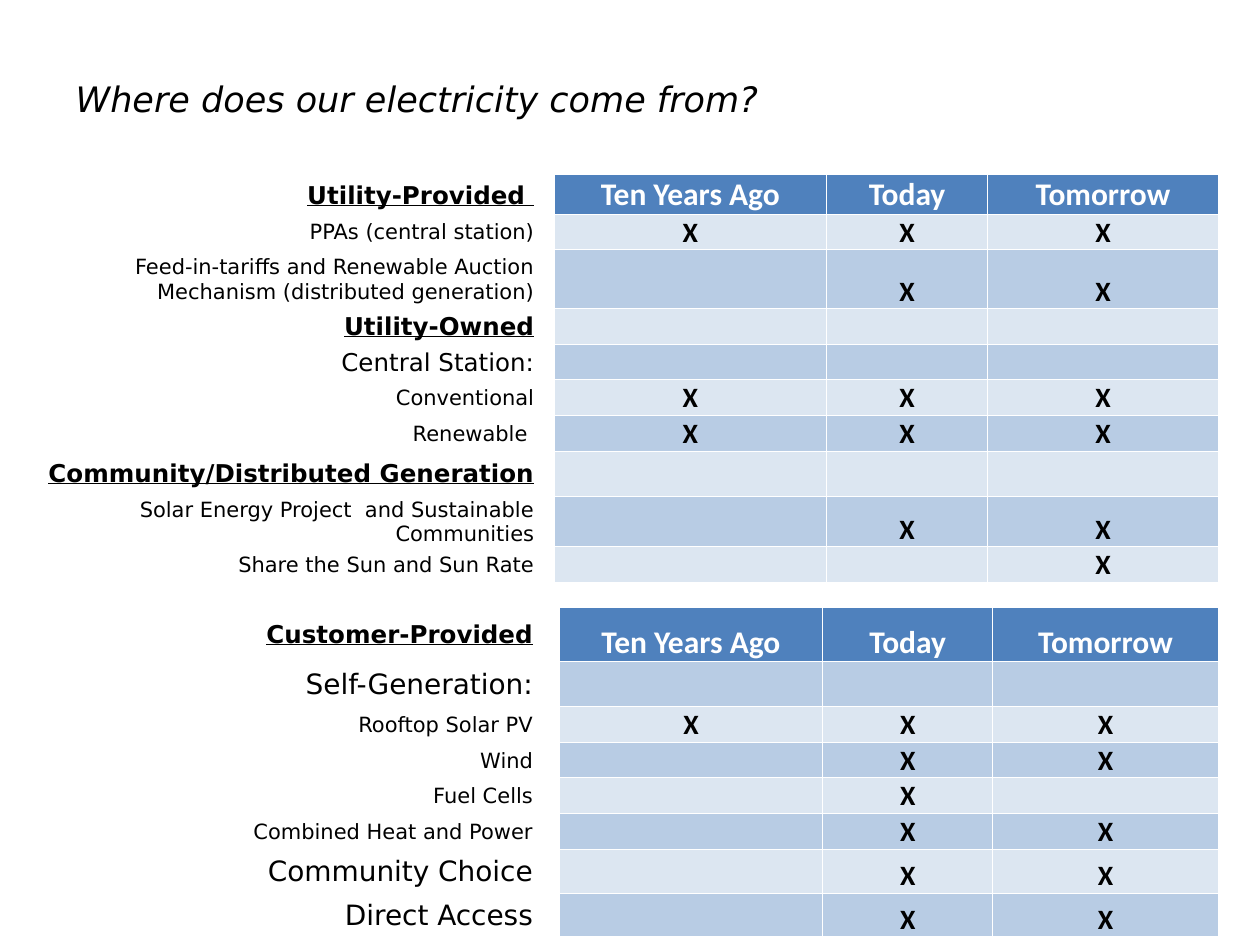
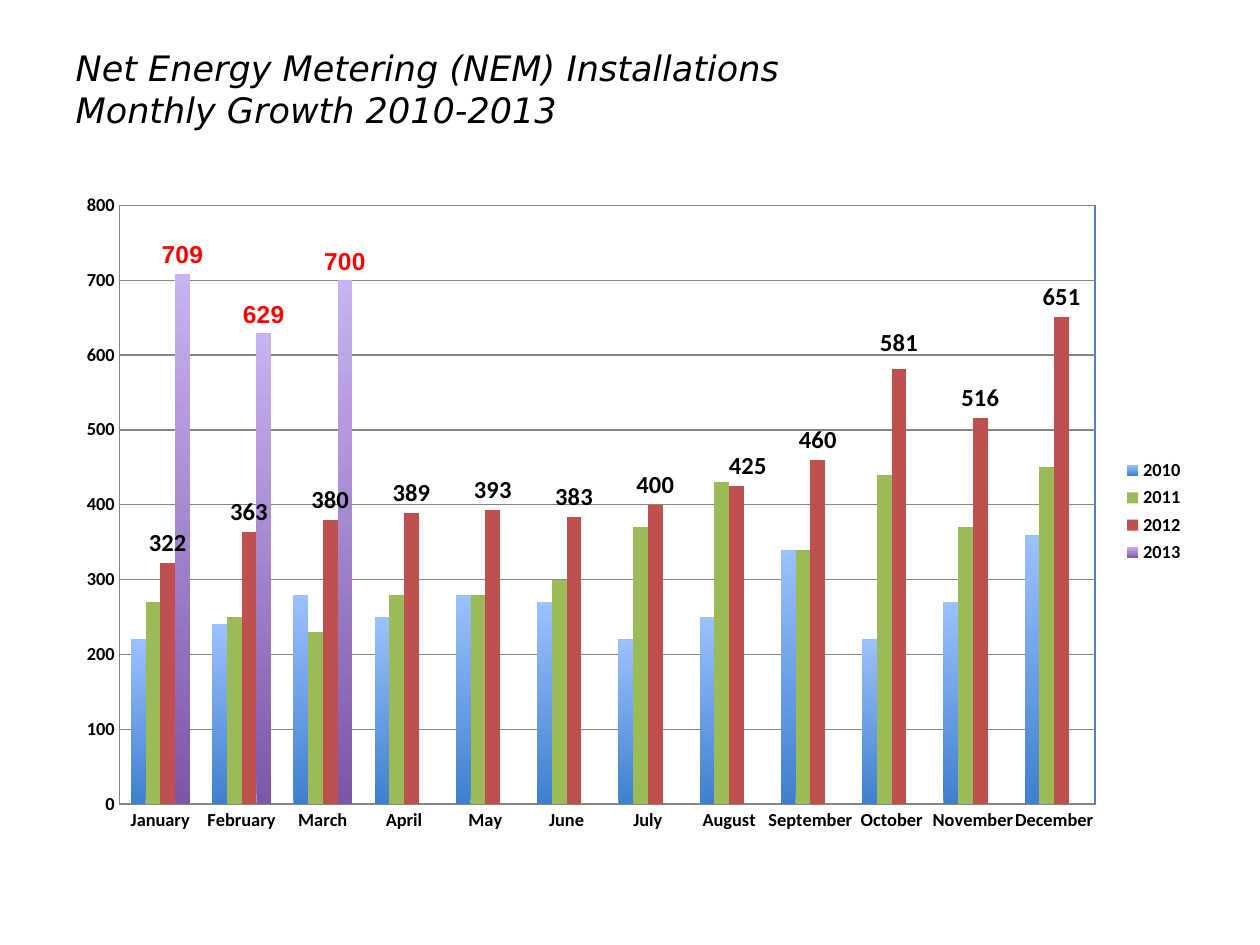
from lxml.etree import SubElement as Sub
from pptx import Presentation
from pptx.chart.data import CategoryChartData as ChartData
from pptx.dml.color import RGBColor as RGB
from pptx.enum.chart import XL_CHART_TYPE as Kind, XL_LABEL_POSITION as Spot
from pptx.enum.chart import XL_LEGEND_POSITION as Side, XL_TICK_MARK as Tick
from pptx.enum.text import MSO_ANCHOR as Anchor, MSO_AUTO_SIZE as Fit, PP_ALIGN as Align
from pptx.oxml.ns import qn
from pptx.util import Inches, Pt

# Shared colours and fonts
BLACK = RGB(0, 0, 0)
WHITE = RGB(255, 255, 255)
RED = RGB(255, 0, 0)
BLUE = RGB(0x4F, 0x81, 0xBD)
PALE = RGB(0xDC, 0xE6, 0xF1)
MID = RGB(0xB8, 0xCC, 0xE4)
GREEN = RGB(0x9B, 0xBB, 0x59)
BRICK = RGB(0xC0, 0x50, 0x4D)
GREY = RGB(0x86, 0x86, 0x86)
SKY = [RGB(0x3F, 0x80, 0xCD), RGB(0x9B, 0xC1, 0xFF)]
PLUM = [RGB(0x7B, 0x57, 0xA8), RGB(0xC9, 0xB2, 0xF0)]
SANS = "DejaVu Sans"
BODY = "Calibri"

# Label styles: head, group and item
HEAD = dict(size=14, bold=True, line=True)
SUB = dict(size=14)
BIG = dict(size=16)
ITEM = dict(size=12)

TIMES = ["Ten Years Ago", "Today", "Tomorrow"]
UTILITY = [
    # label, style, marks, row height
    ("Utility-Provided", HEAD, TIMES, 0.32),
    ("PPAs (central station)", ITEM, "XXX", 0.28),
    ("Feed-in-tariffs and Renewable Auction Mechanism (distributed generation)",
     ITEM, " XX", 0.47),
    ("Utility-Owned", HEAD, "   ", 0.28),
    ("Central Station:", SUB, "   ", 0.28),
    ("Conventional", ITEM, "XXX", 0.28),
    ("Renewable ", ITEM, "XXX", 0.28),
    ("Community/Distributed Generation", HEAD, "   ", 0.36),
    ("Solar Energy Project  and Sustainable Communities", ITEM, " XX", 0.4),
    ("Share the Sun and Sun Rate", ITEM, "  X", 0.28),
]
CUSTOMER = [
    ("Customer-Provided", HEAD, TIMES, 0.43),
    ("Self-Generation:", BIG, "   ", 0.36),
    ("Rooftop Solar PV", ITEM, "XXX", 0.28),
    ("Wind", ITEM, " XX", 0.28),
    ("Fuel Cells", ITEM, " X ", 0.28),
    ("Combined Heat and Power", ITEM, " XX", 0.28),
    ("Community Choice", BIG, " XX", 0.35),
    ("Direct Access", BIG, " XX", 0.35),
]

MONTHS = ["January", "February", "March", "April", "May", "June", "July",
          "August", "September", "October", "November", "December"]
GROWTH = {
    "2010": (220, 240, 280, 250, 280, 270, 220, 250, 340, 220, 270, 360),
    "2011": (270, 250, 230, 280, 280, 300, 370, 430, 340, 440, 370, 450),
    "2012": (322, 363, 380, 389, 393, 383, 400, 425, 460, 581, 516, 651),
    "2013": (709, 629, 700) + (None,) * 9,
}


def style(font, size, face=BODY, color=BLACK, bold=False, italic=False, line=False):
    font.size, font.name, font.color.rgb = Pt(size), face, color
    font.bold, font.italic, font.underline = bold, italic, line


def write(para, text, align=Align.LEFT, **fmt):
    para.alignment = align
    run = para.add_run()
    run.text = text
    style(run.font, **fmt)


def add_slide(deck, title, top, foot=0.05):
    """Title-only slide; foot is the inset below the title."""
    slide = deck.slides.add_slide(deck.slide_layouts[5])
    box = slide.shapes.title
    box.left, box.top = Inches(0.5), Inches(top)
    box.width, box.height = Inches(6.5), Inches(0.62)
    frame = box.text_frame
    frame.word_wrap, frame.auto_size = True, Fit.NONE
    frame.vertical_anchor = Anchor.MIDDLE
    frame.margin_bottom = Inches(foot)
    write(frame.paragraphs[0], title, size=20, face=SANS, italic=True)
    return slide


def rule(cell, sides):
    """Thin white borders on the given sides, in the order L R T B."""
    for side in sides:
        edge = Sub(cell._tc.get_or_add_tcPr(), qn("a:ln" + side), w="6350")
        fill = Sub(edge, qn("a:solidFill"))
        Sub(fill, qn("a:srgbClr"), val=str(WHITE))


def pad(cell, right, anchor):
    cell.margin_left = cell.margin_top = Inches(0.01)
    cell.margin_right, cell.margin_bottom = Inches(right), 0
    cell.vertical_anchor = anchor


def fill_mark(cell, text, row, col, last, shade):
    """One cell of the coloured grid, with borders on its inner sides."""
    pad(cell, 0.01, Anchor.BOTTOM)
    inner = {"L": col > 0, "R": col < 2, "T": row > 0, "B": row < last}
    rule(cell, [side for side, on in inner.items() if on])
    cell.fill.solid()
    cell.fill.fore_color.rgb = shade
    para = cell.text_frame.paragraphs[0]
    if text.strip():
        look = dict(size=16) if row else dict(size=18, color=WHITE)
        write(para, text, align=Align.CENTER, bold=True, **look)
    else:
        Sub(para._p, qn("a:endParaRPr"), sz="1600")


def add_grid(slide, left, top, widths, rows, bands):
    """Right-aligned labels, a narrow gap and three columns of marks."""
    size = [Inches(n) for n in (left, top, sum(widths), sum(r[3] for r in rows))]
    table = slide.shapes.add_table(len(rows), len(widths), *size).table
    table.first_row = table.horz_banding = False
    for col, width in zip(table.columns, widths):
        col.width = Inches(width)
    for i, (label, look, marks, high) in enumerate(rows):
        table.rows[i].height = Inches(high)
        name, gap = table.cell(i, 0), table.cell(i, 1)
        for cell, right in ((name, 0.09), (gap, 0.01)):
            pad(cell, right, Anchor.MIDDLE)
            cell.fill.background()
        write(name.text_frame.paragraphs[0], label, align=Align.RIGHT, face=SANS, **look)
        Sub(gap.text_frame.paragraphs[0]._p, qn("a:endParaRPr"), sz="1200")
        shade = bands[i % 2] if i else BLUE
        for j, mark in enumerate(marks):
            fill_mark(table.cell(i, j + 2), mark, i, j, len(rows) - 1, shade)
    return table


def set_layout(node, after, **place):
    """Manual layout for a chart part, placed after its given child."""
    for old in node.findall(qn("c:layout")):
        node.remove(old)
    layout = Sub(node, qn("c:layout"))
    manual = Sub(layout, qn("c:manualLayout"))
    for key, val in place.items():
        Sub(manual, qn("c:" + key), val=str(val))
    if after is None:
        node.insert(0, layout)
    else:
        after.addnext(layout)


def paint(series, color):
    """Solid fill, or a gradient from the foot up for a list of two colours."""
    fill = series.format.fill
    if isinstance(color, list):
        fill.gradient()
        fill.gradient_angle = 90
        for stop, shade in zip(fill.gradient_stops, color):
            stop.color.rgb = shade
    else:
        fill.solid()
        fill.fore_color.rgb = color


def label(series, **fmt):
    labels = series.data_labels
    labels.show_value, labels.position = True, Spot.OUTSIDE_END
    style(labels.font, size=14, bold=True, **fmt)


def shift(series, index, x, y):
    """Move the label of one column by a share of the chart's size."""
    tag = series.points[index].data_label
    style(tag.font, size=14, bold=True)
    tag.position = Spot.OUTSIDE_END
    for node in series.data_labels._element.findall(qn("c:dLbl")):
        idx = node.find(qn("c:idx"))
        if idx.get("val") == str(index):
            set_layout(node, idx, x=x, y=y)


def frame_plot(chart):
    area = chart._chartSpace.chart.plotArea
    set_layout(area, None, layoutTarget="inner", xMode="edge", yMode="edge",
               x=0.05, y=0.04, w=0.86, h=0.9)
    edge = Sub(Sub(area, qn("c:spPr")), qn("a:ln"), w="9525")
    Sub(Sub(edge, qn("a:solidFill")), qn("a:srgbClr"), val=str(BLUE))


def add_growth(slide, left, top, width, height):
    data = ChartData()
    data.categories = MONTHS
    for year, vals in GROWTH.items():
        data.add_series(year, vals)
    box = [Inches(n) for n in (left, top, width, height)]
    chart = slide.shapes.add_chart(Kind.COLUMN_CLUSTERED, *box, data).chart
    chart.has_title = False
    style(chart.font, size=10)

    # Axes, gridlines and legend
    values, months = chart.value_axis, chart.category_axis
    values.minimum_scale, values.maximum_scale, values.major_unit = 0, 800, 100
    values.has_major_gridlines = True
    for axis in (values, months):
        axis.major_tick_mark = axis.minor_tick_mark = Tick.NONE
        style(axis.tick_labels.font, size=10.5, bold=True)
        axis.format.line.color.rgb = GREY
    values.major_gridlines.format.line.color.rgb = GREY
    chart.has_legend = True
    chart.legend.position = Side.RIGHT
    chart.legend.include_in_layout = False
    style(chart.legend.font, size=10.5, bold=True)

    # Columns and their labels
    plot = chart.plots[0]
    plot.gap_width, plot.overlap, plot.vary_by_categories = 150, 0, False
    for series, color in zip(plot.series, (SKY, GREEN, BRICK, PLUM)):
        paint(series, color)
    label(plot.series[2])
    label(plot.series[3], face="Arial", color=RED)
    shift(plot.series[2], MONTHS.index("August"), 0.01, 0)
    shift(plot.series[2], MONTHS.index("October"), 0, -0.01)
    frame_plot(chart)


def main():
    deck = Presentation()
    deck.slide_width, deck.slide_height = Inches(10), Inches(7.5)

    # Sources of electricity
    slide = add_slide(deck, "Where does our electricity come from?", 0.47)
    grid = add_grid(slide, 0.25, 1.38, (4.08, 0.07, 2.16, 1.28, 1.83), UTILITY, (MID, PALE))
    write(grid.cell(0, 0).text_frame.paragraphs[0], " ", align=Align.RIGHT,
          size=16, face=SANS, line=True)
    add_grid(slide, 0.25, 4.82, (4.07, 0.12, 2.09, 1.35, 1.79), CUSTOMER, (PALE, MID))

    # Monthly growth
    slide = add_slide(deck, "Net Energy Metering (NEM) Installations Monthly Growth 2010-2013",
                      0.55, foot=0.37)
    add_growth(slide, 0.5, 1.42, 9, 5.28)
    deck.save("out.pptx")


if __name__ == "__main__":
    main()
